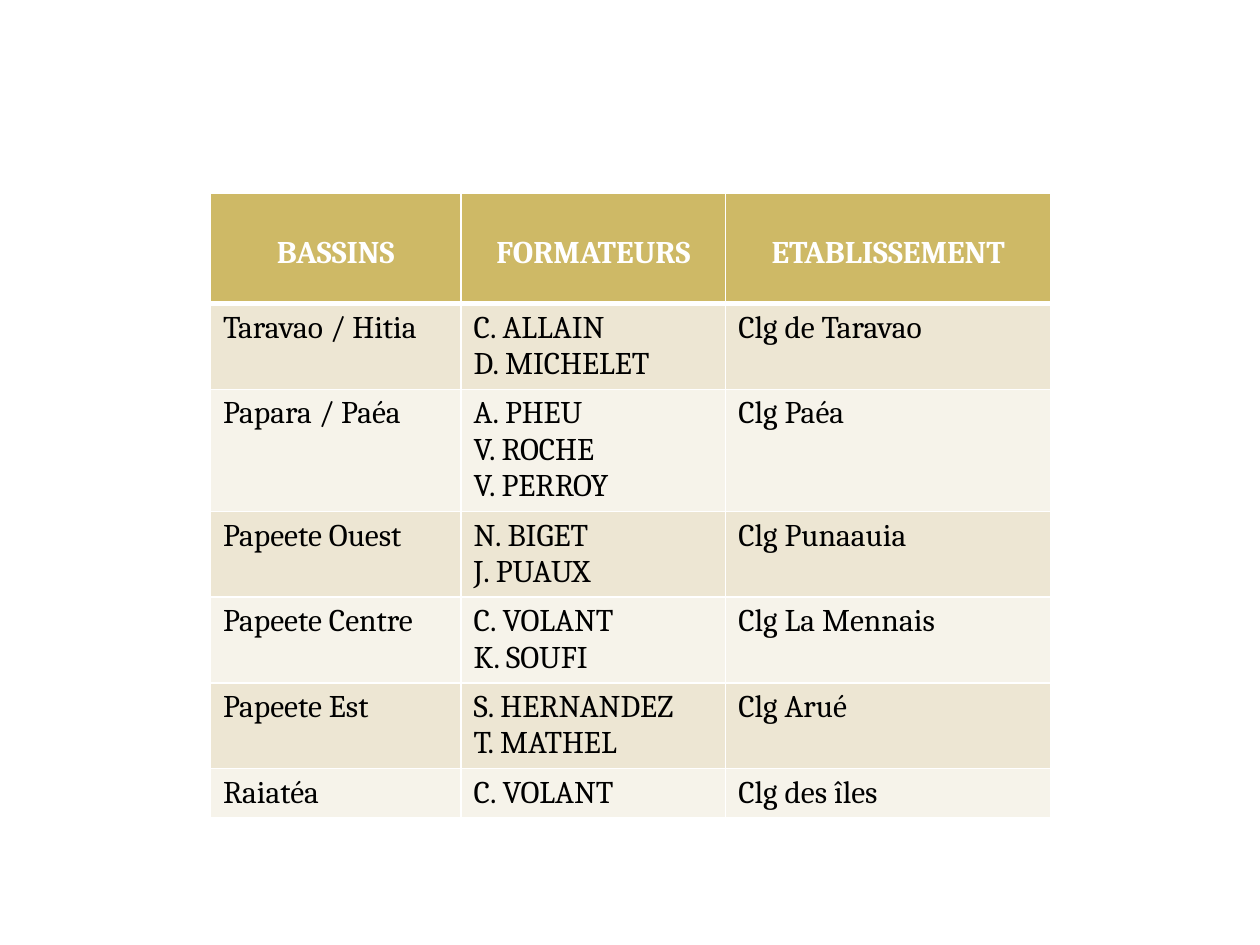
import pptx
import pptx.dml.color
import pptx.enum.text
import pptx.oxml
import pptx.oxml.ns
import pptx.util

RGBColor = pptx.dml.color.RGBColor
WHITE = RGBColor(0xFF, 0xFF, 0xFF)
BLACK = RGBColor(0x00, 0x00, 0x00)
GOLD = RGBColor(0xCE, 0xB9, 0x66)
BANDS = (RGBColor(0xED, 0xE6, 0xD3), RGBColor(0xF6, 0xF3, 0xEA))
FONT = "Cambria"

SLIDE_WIDTH, SLIDE_HEIGHT = 10, 7.5
TABLE_LEFT, TABLE_TOP = 1.67, 1.53
COLUMN_WIDTHS = (1.99, 2.1, 2.58)
HEADER_HEIGHT, LINE_HEIGHT, CELL_MARGIN = 0.88, 0.29, 0.05

HEADERS = ("BASSINS", "FORMATEURS", "ETABLISSEMENT")
BASINS = (
    ("Taravao / Hitia", "C. ALLAIN\nD. MICHELET", "Clg de Taravao"),
    ("Papara / Paéa", "A. PHEU\nV. ROCHE\nV. PERROY", "Clg Paéa"),
    ("Papeete Ouest", "N. BIGET\nJ. PUAUX", "Clg Punaauia"),
    ("Papeete Centre", "C. VOLANT\nK. SOUFI", "Clg La Mennais"),
    ("Papeete Est", "S. HERNANDEZ\nT. MATHEL", "Clg Arué"),
    ("Raiatéa", "C. VOLANT", "Clg des îles"),
)


def write_text(frame, text, color=BLACK, bold=False, align=None, size=18):
    frame.text = text
    for paragraph in frame.paragraphs:
        paragraph.alignment = align
        for run in paragraph.runs:
            run.font.name = FONT
            run.font.size = pptx.util.Pt(size)
            run.font.bold = bold
            run.font.color.rgb = color


def set_borders(cell, **widths):
    """Draw white borders; the sides L, R, T, B are 1 pt unless given."""
    properties = cell._tc.get_or_add_tcPr()
    # Border elements must precede the fill
    for position, side in enumerate("LRTB"):
        width = pptx.util.Pt(widths.get(side, 1))
        properties.insert(position, pptx.oxml.parse_xml(
            f'<a:ln{side} {pptx.oxml.ns.nsdecls("a")} w="{width}">'
            f'<a:solidFill><a:srgbClr val="{WHITE}"/></a:solidFill></a:ln{side}>'))


def fill_cell(cell, text, fill, borders, margin_top=CELL_MARGIN, **text_format):
    cell.fill.solid()
    cell.fill.fore_color.rgb = fill
    cell.margin_top = pptx.util.Inches(margin_top)
    write_text(cell.text_frame, text, **text_format)
    set_borders(cell, **borders)


def add_trainer_table(slide):
    # Row heights follow the longest cell
    heights = [HEADER_HEIGHT] + [
        2 * CELL_MARGIN + LINE_HEIGHT * max(len(text.split("\n")) for text in basin)
        for basin in BASINS]
    trainers = slide.shapes.add_table(
        len(heights), len(HEADERS),
        *map(pptx.util.Inches, (TABLE_LEFT, TABLE_TOP, sum(COLUMN_WIDTHS), sum(heights)))).table
    for column, width in zip(trainers.columns, COLUMN_WIDTHS):
        column.width = pptx.util.Inches(width)
    for row, height in zip(trainers.rows, heights):
        row.height = pptx.util.Inches(height)

    # Header, set one line lower than the cell's top
    for column, heading in enumerate(HEADERS):
        fill_cell(trainers.cell(0, column), heading, GOLD, {"B": 3},
                  margin_top=CELL_MARGIN + LINE_HEIGHT, color=WHITE, bold=True,
                  align=pptx.enum.text.PP_ALIGN.CENTER)

    # Banded body
    for index, basin in enumerate(BASINS):
        borders = {"T": 3} if index == 0 else {}
        for column, text in enumerate(basin):
            fill_cell(trainers.cell(index + 1, column), text,
                      BANDS[index % len(BANDS)], borders)


def main():
    deck = pptx.Presentation()
    deck.slide_width = pptx.util.Inches(SLIDE_WIDTH)
    deck.slide_height = pptx.util.Inches(SLIDE_HEIGHT)
    slide = deck.slides.add_slide(deck.slide_layouts[6])
    add_trainer_table(slide)
    deck.save("out.pptx")


if __name__ == "__main__":
    main()
